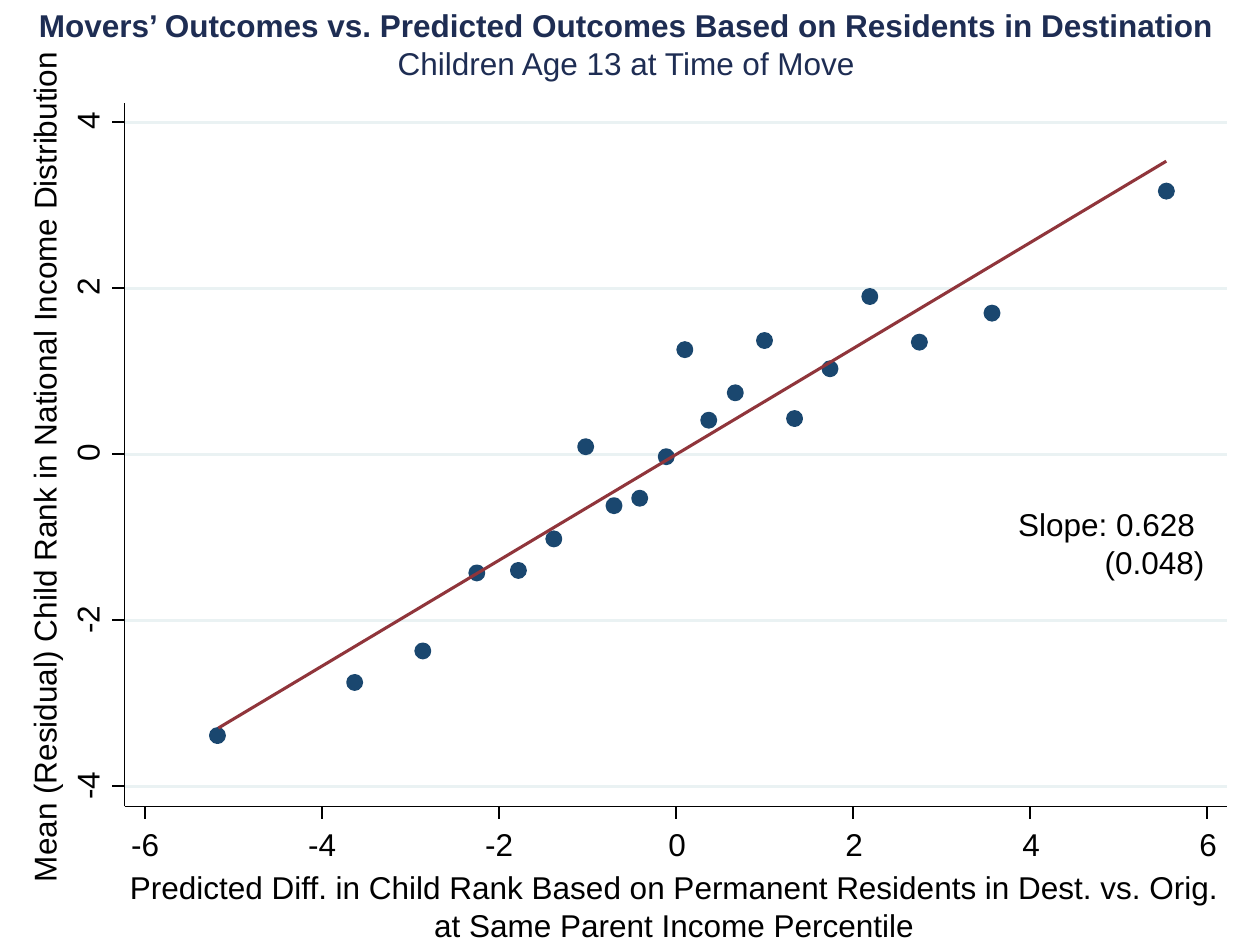
import dataclasses

import lxml.etree
import pptx
import pptx.dml.color
import pptx.enum.shapes
import pptx.enum.text
import pptx.oxml.ns
import pptx.util

HEADING = ["Movers’ Outcomes vs. Predicted Outcomes Based on Residents in Destination",
           "Children Age 13 at Time of Move"]
X_TITLE = ["Predicted Diff. in Child Rank Based on Permanent Residents in Dest. vs. Orig.",
           "at Same Parent Income Percentile"]
Y_TITLE = ["Mean (Residual) Child Rank in National Income Distribution"]
SLOPE = ["Slope: 0.628"]
STANDARD_ERROR = [" (0.048)"]

X_TICKS = range(-6, 7, 2)
Y_TICKS = range(-4, 5, 2)
MOVERS = [  # predicted difference, mean residual rank
    (-5.18, -3.39), (-3.63, -2.75), (-2.86, -2.37), (-2.25, -1.43), (-1.78, -1.40),
    (-1.38, -1.02), (-1.02, 0.09), (-0.70, -0.62), (-0.41, -0.53), (-0.11, -0.03),
    (0.10, 1.26), (0.37, 0.41), (0.67, 0.74), (1.00, 1.37), (1.34, 0.43),
    (1.74, 1.03), (2.19, 1.90), (2.75, 1.35), (3.57, 1.70), (5.54, 3.17),
]
FIT = [(-5.17, -3.30), (0.18, 0.11), (5.54, 3.53)]


@dataclasses.dataclass(frozen=True)
class Theme:
    font: str = "Arial"
    size: float = 18
    heading: str = "1E2D53"
    ink: str = "000000"
    grid: str = "EAF2F3"
    dot: str = "1A476F"
    fit: str = "90353B"
    thick: float = 1.75
    thin: float = 0.88


THEME = Theme()
SLIDE_W, SLIDE_H = 10, 7.5
LEFT, RIGHT, TOP, BOTTOM = 0.99, 9.74, 0.82, 6.4
X_FIRST, X_LAST = 1.15, 9.58
Y_FIRST, Y_LAST = 6.24, 0.97
TICK, DOT, LABEL_H = 0.1, 0.11, 0.36
Y_LABEL_CENTRE, X_LABEL_TOP = 0.72, 6.55

FRAME = {"word_wrap": True, "auto_size": pptx.enum.text.MSO_AUTO_SIZE.SHAPE_TO_FIT_TEXT}
NO_INSET = dict.fromkeys(["margin_left", "margin_right", "margin_top", "margin_bottom"], 0)
CENTRE = pptx.enum.text.PP_ALIGN.CENTER
LEFT_ALIGN = pptx.enum.text.PP_ALIGN.LEFT


def inches(*lengths):
    return [pptx.util.Inches(length) for length in lengths]


def rgb(code):
    return pptx.dml.color.RGBColor.from_string(code)


def apply(target, formats):
    for name, value in formats.items():
        setattr(target, name, value)


def scale(value, ticks, first, last):
    """Place a data value between the positions of the first and last tick."""
    return first + (value - ticks[0]) / (ticks[-1] - ticks[0]) * (last - first)


def x_at(value):
    return scale(value, X_TICKS, X_FIRST, X_LAST)


def y_at(value):
    return scale(value, Y_TICKS, Y_FIRST, Y_LAST)


def stroke(shape, colour, width):
    shape.line.color.rgb = rgb(colour)
    shape.line.width = pptx.util.Pt(width)


def add_line(shapes, start, end, colour=THEME.ink, width=THEME.thin):
    line = shapes.add_connector(pptx.enum.shapes.MSO_CONNECTOR.STRAIGHT, *inches(*start, *end))
    stroke(line, colour, width)
    lxml.etree.SubElement(line._element.spPr, pptx.oxml.ns.qn("a:effectLst"))


def add_text(shapes, box, lines, frame=NO_INSET, colour=THEME.ink, align=LEFT_ALIGN,
             rotation=0, bold_lines=0):
    text = shapes.add_textbox(*inches(*box))
    text.rotation = rotation
    apply(text.text_frame, {**FRAME, **frame})
    for index, line in enumerate(lines):
        paragraph = text.text_frame.paragraphs[0] if index == 0 else text.text_frame.add_paragraph()
        paragraph.alignment = align
        run = paragraph.add_run()
        run.text = line
        apply(run.font, {"name": THEME.font, "size": pptx.util.Pt(THEME.size),
                         "bold": index < bold_lines})
        run.font.color.rgb = rgb(colour)


def add_dot(shapes, x, y):
    dot = shapes.add_shape(pptx.enum.shapes.MSO_SHAPE.OVAL,
                           *inches(x_at(x) - DOT / 2, y_at(y) - DOT / 2, DOT, DOT))
    dot.shadow.inherit = False
    dot.fill.solid()
    dot.fill.fore_color.rgb = rgb(THEME.dot)
    stroke(dot, THEME.dot, THEME.thick)


def add_fit(shapes):
    start, *rest = [tuple(inches(x_at(x), y_at(y))) for x, y in FIT]
    builder = shapes.build_freeform(*start)
    builder.add_line_segments(rest, close=False)
    fit = builder.convert_to_shape()
    fit.shadow.inherit = False
    fit.fill.background()
    stroke(fit, THEME.fit, THEME.thick)


def add_tick_label(shapes, value, vertical):
    width, lead = (0.35, 0.11) if value < 0 else (0.26, 0.06)
    if vertical:
        place = (Y_LABEL_CENTRE - width / 2, y_at(value) - 0.25)
    else:
        place = (x_at(value) - lead, X_LABEL_TOP)
    add_text(shapes, (*place, width, LABEL_H), [str(value)],
             {**NO_INSET, "word_wrap": False}, rotation=270 if vertical else 0)


def add_plot(shapes):
    for value in Y_TICKS:
        add_line(shapes, (LEFT, y_at(value)), (RIGHT, y_at(value)), THEME.grid, THEME.thick)
    for point in MOVERS:
        add_dot(shapes, *point)
    add_fit(shapes)
    add_line(shapes, (LEFT, BOTTOM), (LEFT, TOP))
    for value in Y_TICKS:
        add_line(shapes, (LEFT, y_at(value)), (LEFT - TICK, y_at(value)))
        add_tick_label(shapes, value, vertical=True)
    add_line(shapes, (LEFT, BOTTOM), (RIGHT, BOTTOM))
    for value in X_TICKS:
        add_line(shapes, (x_at(value), BOTTOM), (x_at(value), BOTTOM + TICK))
        add_tick_label(shapes, value, vertical=False)


def main():
    deck = pptx.Presentation()
    deck.slide_width, deck.slide_height = inches(SLIDE_W, SLIDE_H)
    shapes = deck.slides.add_slide(deck.slide_layouts[6]).shapes

    add_text(shapes, (-0.03, 0, SLIDE_W, 0.71), HEADING, {}, THEME.heading, CENTRE, bold_lines=1)
    add_plot(shapes.add_group_shape().shapes)
    add_text(shapes, (-2.99, 3.51, 6.68, 0.3), Y_TITLE, rotation=270)
    add_text(shapes, (0.96, 6.89, 8.78, 0.61), X_TITLE, align=CENTRE)
    add_text(shapes, (8.08, 4.01, 1.42, 0.3), SLOPE, {**NO_INSET, "word_wrap": False})
    add_text(shapes, (8.6, 4.26, 1.07, 0.4), STANDARD_ERROR, {"word_wrap": False})
    deck.save("out.pptx")


if __name__ == "__main__":
    main()
